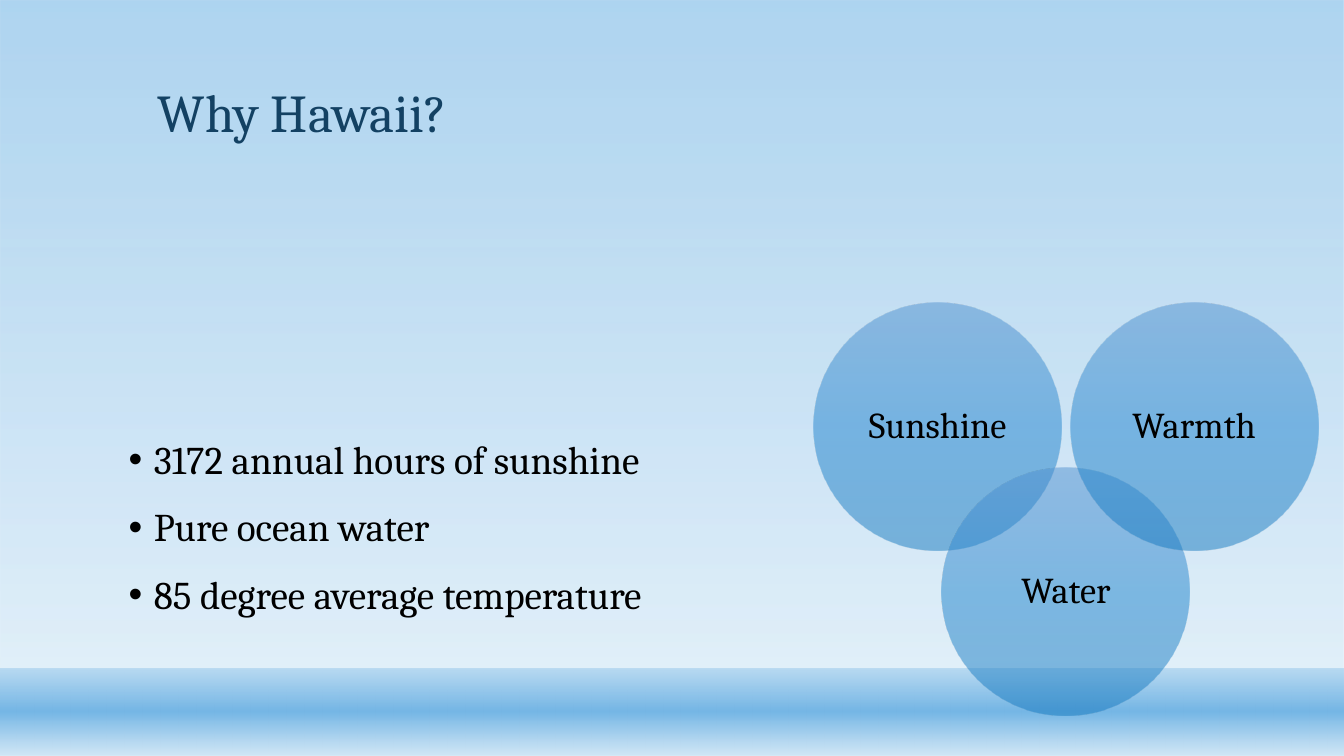
from dataclasses import dataclass

from lxml import etree
from pptx import Presentation
from pptx.dml.color import RGBColor
from pptx.enum.shapes import MSO_SHAPE
from pptx.enum.text import MSO_ANCHOR, PP_ALIGN
from pptx.oxml.ns import qn
from pptx.shapes.autoshape import Shape
from pptx.slide import Slide
from pptx.text.text import _Paragraph
from pptx.util import Cm, Pt

RECTANGLE = MSO_SHAPE.RECTANGLE
OVAL = MSO_SHAPE.OVAL
BOTTOM = MSO_ANCHOR.BOTTOM
MIDDLE = MSO_ANCHOR.MIDDLE
CENTER = PP_ALIGN.CENTER

SLIDE_WIDTH, SLIDE_HEIGHT = 33.87, 19.05
SEA_TOP = 16.84
CIRCLE_SIZE = 6.25
CIRCLES_LEFT, CIRCLES_TOP = 20.51, 7.62
CIRCLE_STEP, CIRCLE_DROP = 3.23, 4.17
CIRCLE_INSET = 0.28
BULLET_INDENT, BULLET_HANG = 0.76, 0.64


@dataclass(frozen=True)
class Stop:
    """A gradient stop; position and opacity are in percent."""
    position: int
    color: str
    opacity: int = 100


@dataclass(frozen=True)
class Box:
    """A frame in centimetres."""
    left: float
    top: float
    width: float
    height: float


@dataclass(frozen=True)
class Reason:
    """A labelled circle, placed by column and row of the cluster."""
    label: str
    column: int
    row: int


@dataclass(frozen=True)
class Theme:
    font: str = "Cambria"
    title_color: RGBColor = RGBColor(0x13, 0x41, 0x63)
    text_color: RGBColor = RGBColor(0, 0, 0)
    title_size: int = 38
    body_size: int = 28
    label_size: int = 26
    line_spacing: float = 0.9
    bullet_gap: int = 18
    sky: tuple[Stop, ...] = (Stop(0, "75B6E5", 58), Stop(88, "D1E7F6", 65))
    sea: tuple[Stop, ...] = (
        Stop(1, "75B6E5", 38), Stop(49, "75B6E5"), Stop(100, "D1E7F6", 89))
    circle: tuple[Stop, ...] = (
        Stop(0, "5191D0", 50), Stop(50, "1E84CE", 50), Stop(100, "1477BE", 50))


THEME = Theme()
TITLE = "Why Hawaii?"
TITLE_BOX = Box(3.73, 0.74, 26.42, 3.02)
FACTS = (
    "3172 annual hours of sunshine",
    "Pure ocean water",
    "85 degree average temperature",
)
FACTS_BOX = Box(2.87, 10.97, 16.79, 5.99)
REASONS = (Reason("Sunshine", 0, 0), Reason("Water", 1, 1), Reason("Warmth", 2, 0))


def fill_downward(shape: Shape, stops: tuple[Stop, ...]) -> None:
    """Fill with a top-to-bottom gradient whose stops may be translucent."""
    shape.fill.gradient()
    gradient = shape.fill._fill._gradFill
    for child in list(gradient):
        gradient.remove(child)
    stop_list = etree.SubElement(gradient, qn("a:gsLst"))
    for stop in stops:
        mark = etree.SubElement(stop_list, qn("a:gs"), pos=str(stop.position * 1000))
        color = etree.SubElement(mark, qn("a:srgbClr"), val=stop.color)
        etree.SubElement(color, qn("a:alpha"), val=str(stop.opacity * 1000))
    etree.SubElement(gradient, qn("a:lin"), ang="5400000", scaled="0")


def add_gradient_shape(slide: Slide, kind: MSO_SHAPE, box: Box,
                       stops: tuple[Stop, ...]) -> Shape:
    shape = slide.shapes.add_shape(
        kind, Cm(box.left), Cm(box.top), Cm(box.width), Cm(box.height))
    shape.shadow.inherit = False
    shape.line.fill.background()
    fill_downward(shape, stops)
    return shape


def add_wrapped_textbox(slide: Slide, box: Box) -> Shape:
    textbox = slide.shapes.add_textbox(
        Cm(box.left), Cm(box.top), Cm(box.width), Cm(box.height))
    textbox.text_frame.word_wrap = True
    return textbox


def style_paragraph(paragraph: _Paragraph, size: int, color: RGBColor) -> None:
    paragraph.line_spacing = THEME.line_spacing
    paragraph.font.name = THEME.font
    paragraph.font.size = Pt(size)
    paragraph.font.color.rgb = color


def add_bullet(paragraph: _Paragraph) -> None:
    properties = paragraph._p.get_or_add_pPr()
    properties.set("marL", str(Cm(BULLET_INDENT)))
    properties.set("indent", str(-Cm(BULLET_HANG)))
    etree.SubElement(properties, qn("a:buFont"), typeface="Arial")
    etree.SubElement(properties, qn("a:buChar"), char="•")


def add_title(slide: Slide) -> None:
    frame = add_wrapped_textbox(slide, TITLE_BOX).text_frame
    frame.vertical_anchor = BOTTOM
    frame.text = TITLE
    style_paragraph(frame.paragraphs[0], THEME.title_size, THEME.title_color)


def add_facts(slide: Slide) -> None:
    frame = add_wrapped_textbox(slide, FACTS_BOX).text_frame
    frame.text = "\n".join(FACTS)
    for index, paragraph in enumerate(frame.paragraphs):
        add_bullet(paragraph)
        style_paragraph(paragraph, THEME.body_size, THEME.text_color)
        if index:
            paragraph.space_before = Pt(THEME.bullet_gap)


def add_reason(slide: Slide, reason: Reason) -> None:
    box = Box(CIRCLES_LEFT + reason.column * CIRCLE_STEP,
              CIRCLES_TOP + reason.row * CIRCLE_DROP, CIRCLE_SIZE, CIRCLE_SIZE)
    frame = add_gradient_shape(slide, OVAL, box, THEME.circle).text_frame
    frame.margin_left = frame.margin_right = Cm(CIRCLE_INSET)
    frame.margin_top = frame.margin_bottom = Cm(CIRCLE_INSET)
    frame.vertical_anchor = MIDDLE
    frame.word_wrap = True
    frame.text = reason.label
    paragraph = frame.paragraphs[0]
    paragraph.alignment = CENTER
    style_paragraph(paragraph, THEME.label_size, THEME.text_color)


def main() -> None:
    presentation = Presentation()
    presentation.slide_width = Cm(SLIDE_WIDTH)
    presentation.slide_height = Cm(SLIDE_HEIGHT)
    slide = presentation.slides.add_slide(presentation.slide_layouts[6])

    sky_box = Box(0, 0, SLIDE_WIDTH, SLIDE_HEIGHT)
    sea_box = Box(0, SEA_TOP, SLIDE_WIDTH, SLIDE_HEIGHT - SEA_TOP)
    add_gradient_shape(slide, RECTANGLE, sky_box, THEME.sky)
    add_gradient_shape(slide, RECTANGLE, sea_box, THEME.sea)
    add_title(slide)
    add_facts(slide)
    for reason in REASONS:
        add_reason(slide, reason)

    presentation.save("out.pptx")


if __name__ == "__main__":
    main()
